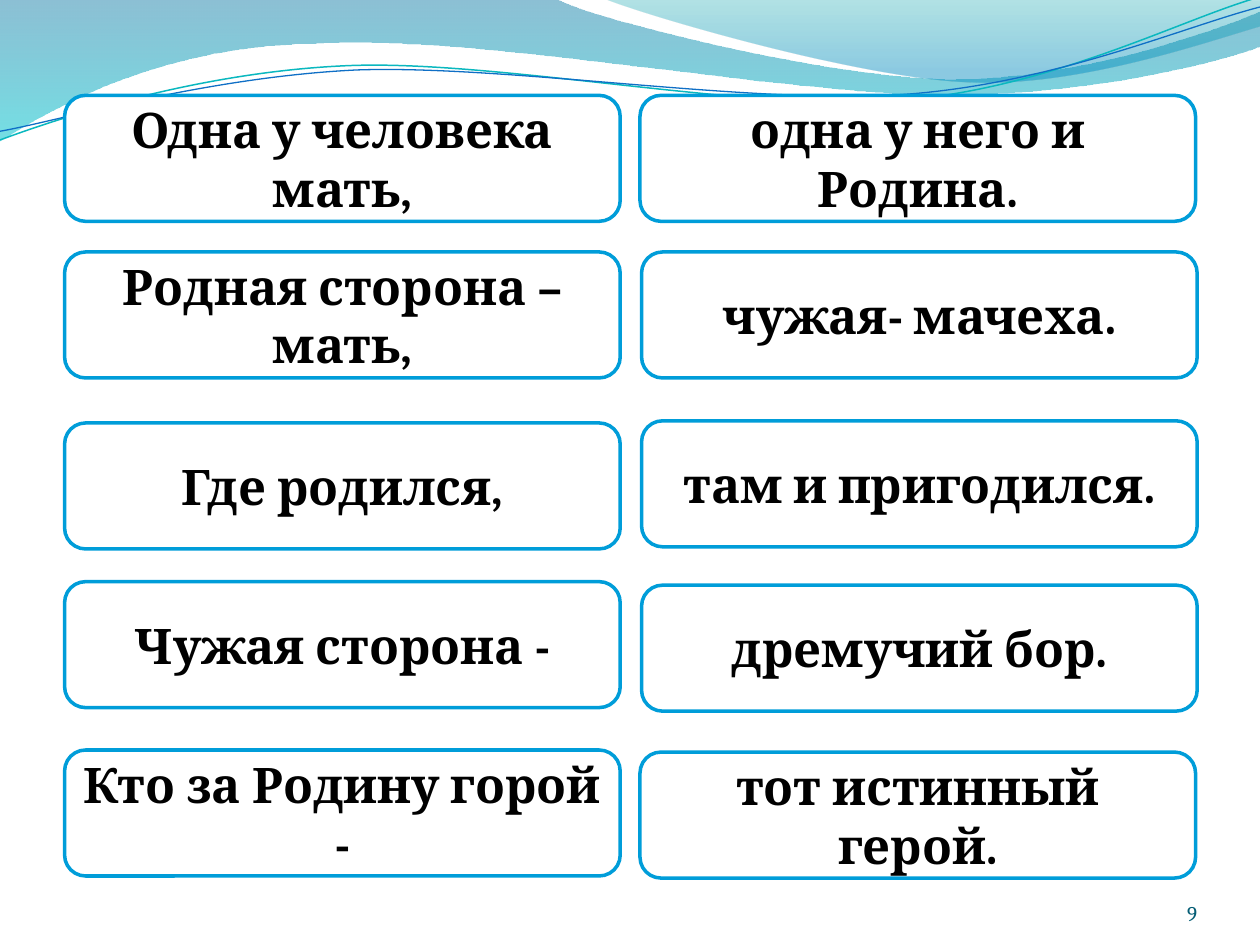
import math

import pptx
import pptx.dml.color
import pptx.enum.shapes
import pptx.enum.text
import pptx.util
from lxml import etree
from pptx.oxml.ns import qn

Pt = pptx.util.Pt
FONT = "Cambria"

# Outlines in points: a pair is a straight step, three pairs are a Bezier curve
WIDE_WAVE = [
    (0, -1), (317, -1),
    ((343, 12), (478, 45), (546, 45)), ((614, 45), (690, 19), (720, 6.5)),
    (721, 26),
    ((708, 32), (626, 55), (537, 54)), ((447, 54), (275, 20), (185, 24.5)),
    ((93, 25), (33, 60), (-1, 81)),
]
TOP_WAVE = [
    (345, -1),
    ((366, 8), (491, 45), (554, 47)), ((616, 50), (692, 23), (720, 15)),
    (720, 0),
]
TEAL_LINE = [
    (0, 80),
    ((35, 67), (114, 41), (199, 37.5)), ((284, 34), (427, 64), (513, 57.5)),
    ((600, 51), (675, 11), (719, -1.5)),
]
BLUE_LINE = [
    (0, 75),
    ((34, 69), (118, 44), (204, 40)), ((290, 37), (430, 60), (516, 54)),
    ((602, 48), (677, 15), (720, 4)),
]
LINE_TILT = -2.7

# Proverb halves: left, top, text
BOX_SIZE = (317.5, 72)
PROVERBS = [
    (36.9, 54.5, "Одна у человека мать,"), (365.7, 54.5, "одна у него и Родина."),
    (36.9, 144, "Родная сторона – мать,"), (366.6, 144, "чужая- мачеха."),
    (36.9, 241.7, "Где родился,"), (366.6, 240.5, "там и пригодился."),
    (36.9, 332.4, "Чужая сторона -"), (366.6, 334.4, "дремучий бор."),
    (36.9, 428.6, "Кто за Родину горой -"), (365.7, 429.8, "тот истинный герой."),
]


def color(hex_code):
    return pptx.dml.color.RGBColor.from_string(hex_code)


def is_curve(step):
    return isinstance(step[0], tuple)


def turn(point, center, degrees):
    angle = math.radians(degrees)
    x, y = point[0] - center[0], point[1] - center[1]
    return (center[0] + x * math.cos(angle) - y * math.sin(angle),
            center[1] + x * math.sin(angle) + y * math.cos(angle))


def add_outline(slide, outline, close, center=(0, 0), tilt=0):
    """Add a freeform; with a tilt it is drawn level and then rotated."""
    corners = []
    for step in outline:
        corners.extend(step if is_curve(step) else [step])
    points = [tuple(map(Pt, turn(corner, center, -tilt))) for corner in corners]
    builder = slide.shapes.build_freeform(*points[0], scale=1.0)
    builder.add_line_segments(points[1:], close=close)
    shape = builder.convert_to_shape()
    shape.shadow.inherit = False
    shape.rotation = tilt % 360

    # Join each three steps of a curve into one Bezier segment
    segments = iter(list(shape._element.spPr.iter(qn("a:lnTo"))))
    for step in outline[1:]:
        segment = next(segments)
        if is_curve(step):
            segment_curve = etree.Element(qn("a:cubicBezTo"))
            segment.addprevious(segment_curve)
            for part in (segment, next(segments), next(segments)):
                segment_curve.append(part[0])
                part.getparent().remove(part)
    return shape


def add_wave(slide, outline, stops):
    """Add a filled wave; each stop is position, colour, opacity in percent."""
    shape = add_outline(slide, outline, close=True)
    shape.line.fill.background()
    shape.fill.gradient()
    shape.fill.gradient_angle = 270
    for stop, (position, hex_code, _) in zip(shape.fill.gradient_stops, stops):
        stop.position = position
        stop.color.rgb = color(hex_code)
    color_elements = list(shape._element.spPr.iter(qn("a:srgbClr")))
    for element, (_, _, opacity) in zip(color_elements, stops):
        etree.SubElement(element, qn("a:alpha")).set("val", str(opacity * 1000))


def add_curve(slide, outline, center, hex_code, width):
    shape = add_outline(slide, outline, close=False, center=center, tilt=LINE_TILT)
    shape.fill.background()
    shape.line.color.rgb = color(hex_code)
    shape.line.width = Pt(width)


def write_text(shape, text, size, hex_code, alignment, anchor, bold=False):
    frame = shape.text_frame
    frame.word_wrap = True
    frame.vertical_anchor = anchor
    paragraph = frame.paragraphs[0]
    paragraph.text = text
    paragraph.alignment = alignment
    paragraph.font.name = FONT
    paragraph.font.size = Pt(size)
    paragraph.font.bold = bold
    paragraph.font.color.rgb = color(hex_code)


def add_proverb_box(slide, left, top, text):
    shape = slide.shapes.add_shape(
        pptx.enum.shapes.MSO_SHAPE.ROUNDED_RECTANGLE,
        Pt(left), Pt(top), *map(Pt, BOX_SIZE))
    shape.shadow.inherit = False
    shape.fill.solid()
    shape.fill.fore_color.rgb = color("FFFFFF")
    shape.line.color.rgb = color("009DD9")
    shape.line.width = Pt(2)
    write_text(shape, text, 28, "000000", pptx.enum.text.PP_ALIGN.CENTER,
               pptx.enum.text.MSO_ANCHOR.MIDDLE, bold=True)


def add_page_number(slide, text):
    shape = slide.shapes.add_textbox(Pt(624), Pt(500.4), Pt(60), Pt(28.8))
    frame = shape.text_frame
    frame.margin_left = frame.margin_right = frame.margin_top = frame.margin_bottom = 0
    write_text(shape, text, 12, "045D75", pptx.enum.text.PP_ALIGN.RIGHT,
               pptx.enum.text.MSO_ANCHOR.BOTTOM)


def main():
    presentation = pptx.Presentation()
    presentation.slide_width = Pt(720)
    presentation.slide_height = Pt(540)
    slide = presentation.slides.add_slide(presentation.slide_layouts[6])

    # Wave decoration along the top
    add_wave(slide, WIDE_WAVE, [(0, "0074A1", 45), (1, "00C6CF", 55)])
    add_wave(slide, TOP_WAVE, [(0, "00A1A9", 30), (0.8, "008BBF", 45)])
    add_curve(slide, TEAL_LINE, (359.3, 41.4), "0AB8BF", 0.85)
    add_curve(slide, BLUE_LINE, (359.6, 42.5), "0F6FC6", 0.75)

    # Page number and proverb halves
    add_page_number(slide, "9")
    for left, top, text in PROVERBS:
        add_proverb_box(slide, left, top, text)

    presentation.save("out.pptx")


if __name__ == "__main__":
    main()
